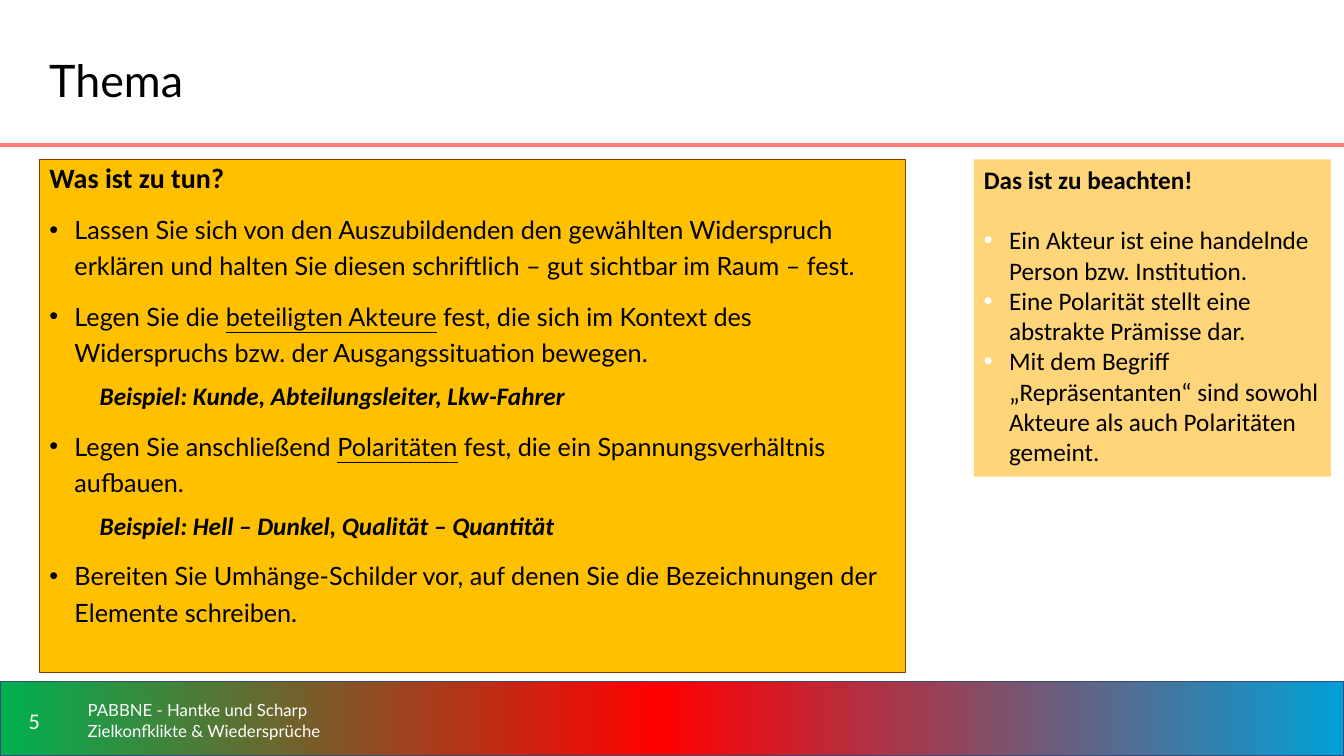
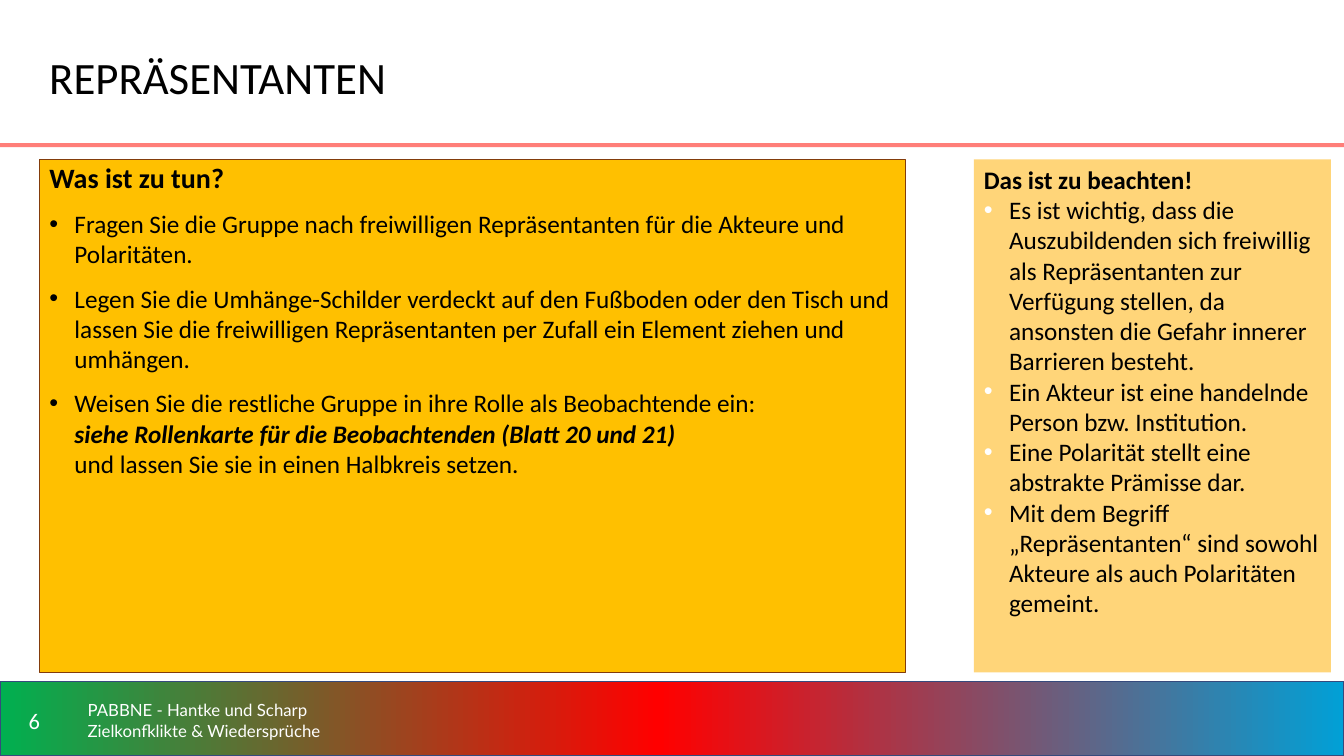
"""Builds two task slides with a main panel, a side note and a shared frame."""
from copy import deepcopy
from dataclasses import dataclass

from lxml.etree import SubElement
from pptx import Presentation
from pptx.dml.color import RGBColor
from pptx.enum.shapes import MSO_SHAPE as Shape
from pptx.enum.text import MSO_ANCHOR as Anchor, PP_ALIGN as Align
from pptx.oxml.ns import qn
from pptx.util import Inches, Pt


@dataclass(frozen=True)
class Theme:
    """Colours, fonts and type sizes of the slides."""
    text: str = "000000"
    light: str = "FFFFFF"
    rule: str = "FF7E79"
    band: tuple = ((0, "00B050"), (0.49, "FF0000"), (1, "01A0D6"))
    band_line: str = "364A7D"
    task: str = "FFC000"
    task_line: str = "833C0B"
    note: str = "FFD579"
    plain: str = "Calibri"
    accent: str = "Lato"
    title_size: int = 32
    heading_size: int = 20
    body_size: int = 18
    number_size: int = 16
    footer_size: int = 12


THEME = Theme()
FOOTER = "PABBNE - Hantke und Scharp Zielkonfklikte & Wiedersprüche"
PANEL_TOP = 1.58
PANEL_HEIGHT = 5.09


@dataclass(frozen=True)
class Entry:
    """One paragraph: lines of (text, style) runs, style letters b, i and u."""
    lines: tuple
    font: str = THEME.plain
    size: int = THEME.body_size
    color: str = THEME.text
    bullet: str = ""
    indent: float = 0
    before: float = 0
    spacing: float = 1
    align: Align = Align.LEFT


def line_entry(text, style="", **options):
    """Return an entry holding a single run."""
    return Entry((((text, style),),), **options)


def task_heading():
    """Return the heading of a task panel."""
    return line_entry("Was ist zu tun?", "b", size=THEME.heading_size, spacing=0.9)


def task_point(*lines, **options):
    """Return a bulleted task made of lines of runs."""
    return Entry(lines, bullet=THEME.text, indent=0.25, before=10, **options)


def example(text):
    """Return an indented example below a task."""
    return line_entry(text, "bi", indent=0.5, before=5, spacing=1.2)


def note_entries(points, gap=0):
    """Return the note heading and its points, with a gap between them."""
    entries = [line_entry("Das ist zu beachten!", "b")]
    for index, point in enumerate(points):
        entries.append(line_entry(point, bullet=THEME.light, indent=0.25,
                                  before=0 if index else gap))
    return entries


def set_bullet(paragraph, entry):
    """Set the indent of a paragraph and its bullet, if it has one."""
    properties = paragraph._p.get_or_add_pPr()
    properties.set("marL", str(Inches(entry.indent)))
    properties.set("indent", str(-Inches(entry.indent) if entry.bullet else 0))
    if entry.bullet:
        color = SubElement(properties, qn("a:buClr"))
        SubElement(color, qn("a:srgbClr")).set("val", entry.bullet)
        SubElement(properties, qn("a:buFont")).set("typeface", "Arial")
        SubElement(properties, qn("a:buChar")).set("char", "•")


def add_runs(paragraph, entry):
    """Add the runs of an entry, with a break between its lines."""
    for index, line in enumerate(entry.lines):
        if index:
            paragraph.add_line_break()
        for text, style in line:
            run = paragraph.add_run()
            run.text = text
            run.font.name = entry.font
            run.font.size = Pt(entry.size)
            run.font.color.rgb = RGBColor.from_string(entry.color)
            run.font.bold = "b" in style
            run.font.italic = "i" in style
            run.font.underline = "u" in style


def write(shape, entries, anchor=Anchor.TOP):
    """Write entries into the text frame of a shape."""
    frame = shape.text_frame
    frame.word_wrap = True
    frame.vertical_anchor = anchor
    for index, entry in enumerate(entries):
        paragraph = frame.add_paragraph() if index else frame.paragraphs[0]
        set_bullet(paragraph, entry)
        paragraph.alignment = entry.align
        paragraph.line_spacing = entry.spacing
        paragraph.space_before = Pt(entry.before)
        add_runs(paragraph, entry)


def add_label(slide, box, entry):
    """Add a vertically centred text box."""
    label = slide.shapes.add_textbox(*map(Inches, box))
    write(label, [entry], Anchor.MIDDLE)


def add_box(slide, box, fill, line=None, width=1):
    """Add a rectangle with a solid fill and an optional outline."""
    shape = slide.shapes.add_shape(Shape.RECTANGLE, *map(Inches, box))
    shape.shadow.inherit = False
    shape.fill.solid()
    shape.fill.fore_color.rgb = RGBColor.from_string(fill)
    if line:
        shape.line.color.rgb = RGBColor.from_string(line)
        shape.line.width = Pt(width)
    else:
        shape.line.fill.background()
    return shape


def set_gradient(shape, colors):
    """Fill a shape from left to right with (position, colour) stops."""
    shape.fill.gradient()
    shape.fill.gradient_angle = 0
    stop_list = shape._element.spPr.find(qn("a:gradFill")).find(qn("a:gsLst"))
    while len(stop_list) < len(colors):
        stop_list.append(deepcopy(stop_list[0]))
    for stop, (position, color) in zip(shape.fill.gradient_stops, colors):
        stop.position = position
        stop.color.rgb = RGBColor.from_string(color)


def add_frame(slide, number, title):
    """Add the band, rule, title, slide number and footer."""
    band = add_box(slide, (0, 6.76, 13.33, 0.74), THEME.light, THEME.band_line)
    set_gradient(band, THEME.band)
    add_box(slide, (0, 1.42, 13.33, 0.04), THEME.rule)
    add_label(slide, (0.39, 0.2, 9.84, 1.18), title)
    add_label(slide, (0, 6.84, 0.68, 0.61),
              line_entry(str(number), size=THEME.number_size,
                         color=THEME.light, align=Align.CENTER))
    add_label(slide, (0.77, 6.84, 2.78, 0.61),
              line_entry(FOOTER, font=THEME.accent, size=THEME.footer_size,
                         color=THEME.light))


def add_task_slide(presentation, number, title, tasks, notes, note_height):
    """Add a slide with a task panel and a side note."""
    slide = presentation.slides.add_slide(presentation.slide_layouts[6])
    add_frame(slide, number, title)
    panel = add_box(slide, (0.39, PANEL_TOP, 8.59, PANEL_HEIGHT),
                    THEME.task, THEME.task_line, 0.75)
    write(panel, [task_heading(), *tasks])
    note = add_box(slide, (9.66, PANEL_TOP, 3.54, note_height), THEME.note)
    write(note, notes)


def main():
    """Build and save the presentation."""
    presentation = Presentation()
    presentation.slide_width = Inches(13.33)
    presentation.slide_height = Inches(7.5)

    terms = [
        "Ein Akteur ist eine handelnde Person bzw. Institution.",
        "Eine Polarität stellt eine abstrakte Prämisse dar.",
        "Mit dem Begriff „Repräsentanten“ sind sowohl Akteure als auch "
        "Polaritäten gemeint.",
    ]
    wide = {"font": THEME.accent, "spacing": 1.2}
    topic_tasks = [
        task_point((("Lassen Sie sich von den Auszubildenden den gewählten "
                     "Widerspruch erklären und halten Sie diesen schriftlich – "
                     "gut sichtbar im Raum – fest.", ""),), **wide),
        task_point((("Legen Sie die ", ""), ("beteiligten Akteure", "u"),
                    (" fest, die sich im Kontext des Widerspruchs bzw. der "
                     "Ausgangssituation bewegen.", "")), **wide),
        example("Beispiel: Kunde, Abteilungsleiter, Lkw-Fahrer"),
        task_point((("Legen Sie anschließend ", ""), ("Polaritäten", "u"),
                    (" fest, die ein Spannungsverhältnis aufbauen.", "")), **wide),
        example("Beispiel: Hell – Dunkel, Qualität – Quantität"),
        task_point((("Bereiten Sie Umhänge-Schilder vor, auf denen Sie die "
                     "Bezeichnungen der Elemente schreiben.", ""),), **wide),
    ]
    add_task_slide(presentation, 5,
                   line_entry("Thema", font=THEME.accent, size=THEME.title_size),
                   topic_tasks, note_entries(terms, gap=21.6), 3.15)

    role_tasks = [
        task_point((("Fragen Sie die Gruppe nach freiwilligen Repräsentanten "
                     "für die Akteure und Polaritäten.", ""),)),
        task_point((("Legen Sie die Umhänge-Schilder verdeckt auf den Fußboden "
                     "oder den Tisch und lassen Sie die freiwilligen "
                     "Repräsentanten per Zufall ein Element ziehen und "
                     "umhängen.", ""),)),
        task_point((("Weisen Sie die restliche Gruppe in ihre Rolle als "
                     "Beobachtende ein:", ""),),
                   (("siehe Rollenkarte für die Beobachtenden "
                     "(Blatt 20 und 21)", "bi"),),
                   (("und lassen Sie sie in einen Halbkreis setzen.", ""),)),
    ]
    volunteering = ("Es ist wichtig, dass die Auszubildenden sich freiwillig als "
                    "Repräsentanten zur Verfügung stellen, da ansonsten die "
                    "Gefahr innerer Barrieren besteht.")
    add_task_slide(presentation, 6,
                   line_entry("REPRÄSENTANTEN", size=THEME.title_size, spacing=0.9),
                   role_tasks, note_entries([volunteering, *terms]), PANEL_HEIGHT)

    presentation.save("out.pptx")


if __name__ == "__main__":
    main()
